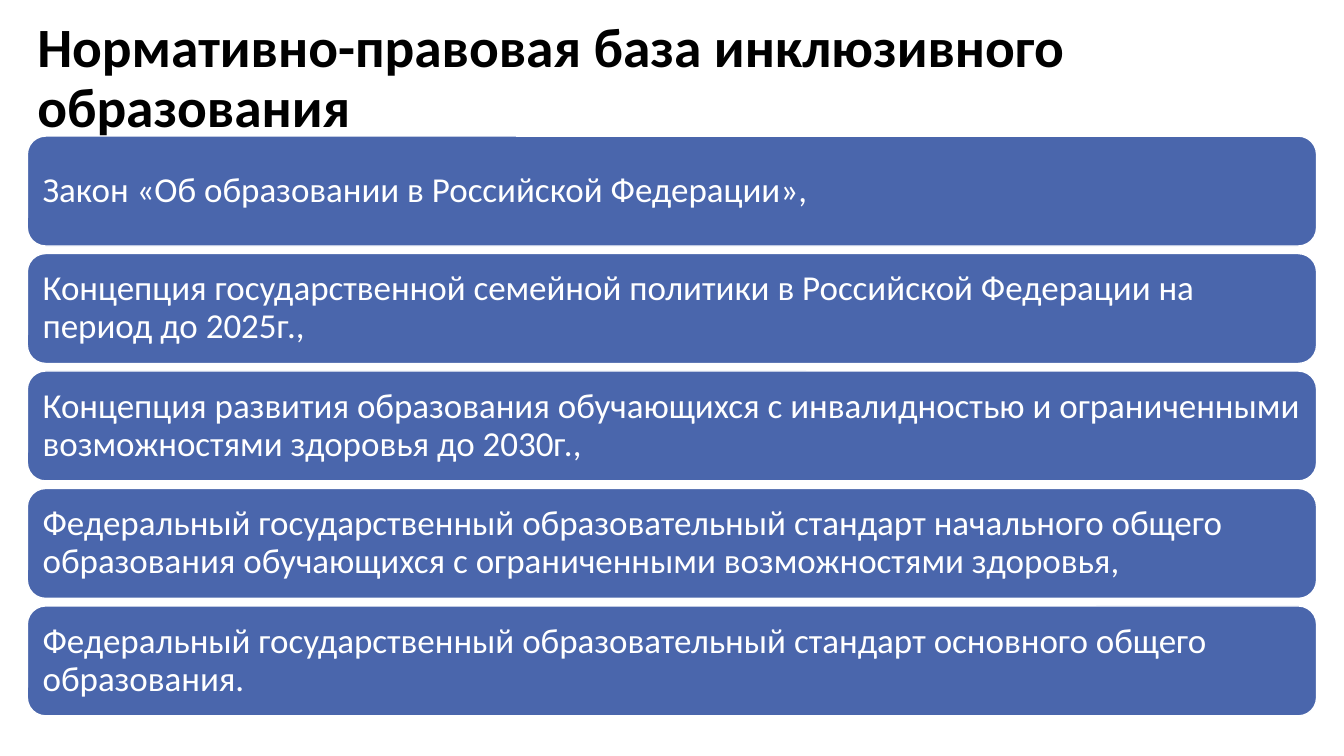
from dataclasses import dataclass

from pptx import Presentation
from pptx.dml.color import RGBColor
from pptx.enum.shapes import MSO_SHAPE
from pptx.enum.text import MSO_ANCHOR, PP_ALIGN
from pptx.util import Cm, Pt


@dataclass(frozen=True)
class Theme:
    """Colours, font and type sizes of the deck."""

    font: str = "Calibri"
    ink: RGBColor = RGBColor(0x00, 0x00, 0x00)
    paper: RGBColor = RGBColor(0xFF, 0xFF, 0xFF)
    accent: RGBColor = RGBColor(0x4A, 0x66, 0xAC)
    title_size: float = 39.6
    card_size: float = 25


class SlideBuilder:
    """Draws styled elements on the current slide."""

    def __init__(self, page, theme):
        """Keep the slide and its theme."""
        self.page = page
        self.theme = theme

    def add_text(self, shape, text, size, color, bold=False):
        """Put one left-aligned run of text in a shape."""
        frame = shape.text_frame
        frame.word_wrap = True
        frame.vertical_anchor = MSO_ANCHOR.MIDDLE
        para = frame.paragraphs[0]
        para.alignment = PP_ALIGN.LEFT
        para.line_spacing = 0.9
        span = para.add_run()
        span.text = text
        span.font.name = self.theme.font
        span.font.size = Pt(size)
        span.font.bold = bold
        span.font.color.rgb = color

    def title(self, text, left, top, width, height):
        """Add the slide heading."""
        box = self.page.shapes.add_textbox(Cm(left), Cm(top), Cm(width), Cm(height))
        self.add_text(box, text, self.theme.title_size, self.theme.ink, bold=True)

    def card(self, text, left, top, width, height):
        """Add a rounded card with its text."""
        card = self.page.shapes.add_shape(
            MSO_SHAPE.ROUNDED_RECTANGLE, Cm(left), Cm(top), Cm(width), Cm(height)
        )
        card.shadow.inherit = False
        card.fill.solid()
        card.fill.fore_color.rgb = self.theme.accent
        card.line.color.rgb = self.theme.paper
        card.line.width = Pt(1)
        frame = card.text_frame
        frame.margin_left = frame.margin_right = Cm(0.25)
        frame.margin_top = frame.margin_bottom = Cm(0.25)
        self.add_text(card, text, self.theme.card_size, self.theme.paper)


DOCUMENTS = [
    "Закон «Об образовании в Российской Федерации»,",
    "Концепция государственной семейной политики в Российской Федерации на период до 2025г.,",
    "Концепция развития образования обучающихся с инвалидностью и ограниченными "
    "возможностями здоровья до 2030г.,",
    "Федеральный государственный образовательный стандарт начального общего образования "
    "обучающихся с ограниченными возможностями здоровья,",
    "Федеральный государственный образовательный стандарт основного общего образования.",
]
LEFT = 0.69
FIRST_TOP = 3.43
CARD_WIDTH = 32.49
CARD_HEIGHT = 2.77
CARD_PITCH = 2.96


def main():
    """Build and save the deck."""
    deck = Presentation()
    deck.slide_width = Cm(33.87)
    deck.slide_height = Cm(19.05)
    page = deck.slides.add_slide(deck.slide_layouts[6])
    builder = SlideBuilder(page, Theme())
    builder.title(
        "Нормативно-правовая база инклюзивного образования", LEFT, 0.58, 33.17, 2.84
    )
    for index, document in enumerate(DOCUMENTS):
        top = FIRST_TOP + index * CARD_PITCH
        builder.card(document, LEFT, top, CARD_WIDTH, CARD_HEIGHT)
    deck.save("out.pptx")


if __name__ == "__main__":
    main()
